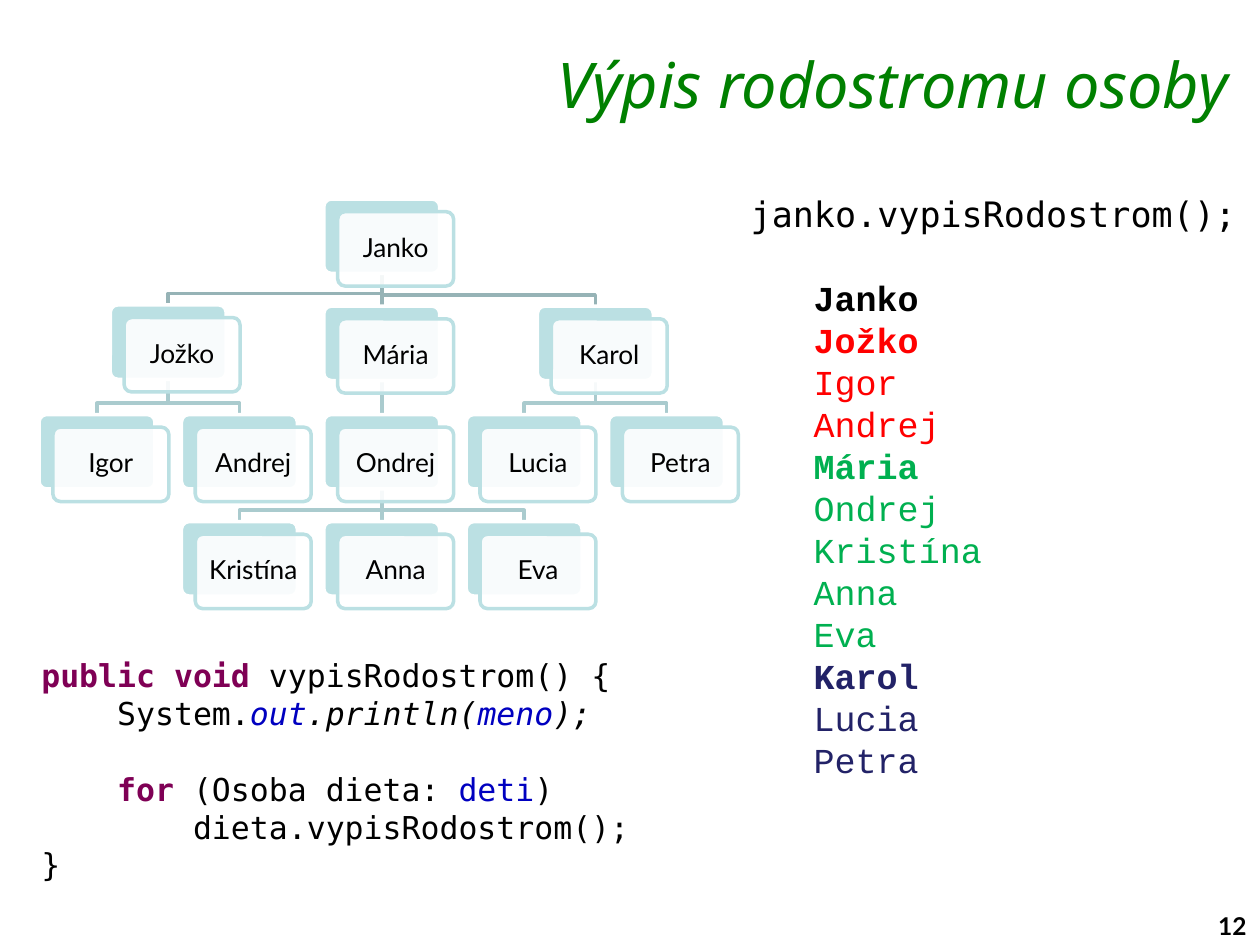
import lxml.etree
import pptx
import pptx.dml.color
import pptx.enum.shapes
import pptx.enum.text
import pptx.oxml.ns
import pptx.util

Inches = pptx.util.Inches
Pt = pptx.util.Pt
ALIGN = pptx.enum.text.PP_ALIGN
ANCHOR = pptx.enum.text.MSO_ANCHOR
qn = pptx.oxml.ns.qn

COLORS = {
    "black": "000000", "white": "FFFFFF", "title": "008000",
    "card": "BBE0E3", "top_line": "96B3B6", "line": "AACBCE",
    "keyword": "7F0055", "field": "0000C0",
    "red": "FF0000", "green": "00B050", "navy": "222267",
}
MONO = "DejaVu Sans Mono"
CARD_WIDTH, CARD_HEIGHT = 0.92, 0.59
FIRST_LEFT, COLUMN_STEP = 0.31, 1.13

FAMILY = {
    "Janko": (None, 2, 1.58),
    "Jožko": ("Janko", 0.5, 2.42),
    "Igor": ("Jožko", 0, 3.29),
    "Andrej": ("Jožko", 1, 3.29),
    "Mária": ("Janko", 2, 2.43),
    "Ondrej": ("Mária", 2, 3.29),
    "Kristína": ("Ondrej", 1, 4.14),
    "Anna": ("Ondrej", 2, 4.14),
    "Eva": ("Ondrej", 3, 4.14),
    "Karol": ("Janko", 3.5, 2.43),
    "Lucia": ("Karol", 3, 3.29),
    "Petra": ("Karol", 4, 3.29),
}
BRANCH_COLORS = {"Janko": "black", "Jožko": "red", "Mária": "green", "Karol": "navy"}

CODE = [
    [("public void ", {"color": "keyword", "bold": True}), ("vypisRodostrom() {", {})],
    [("    System.", {}), ("out", {"color": "field", "italic": True}),
     (".println(", {"italic": True}), ("meno", {"color": "field", "italic": True}),
     (");", {"italic": True})],
    [("    for ", {"color": "keyword", "bold": True}), ("(Osoba dieta: ", {}),
     ("deti", {"color": "field"}), (")", {})],
    [("        dieta.vypisRodostrom();", {})],
    [("}", {})],
]
LOOP_LINE = 2


def rgb(name):
    return pptx.dml.color.RGBColor.from_string(COLORS[name])


def add_run(paragraph, text, font=MONO, size=18, color="black", bold=False, italic=False):
    run = paragraph.add_run()
    run.text = text
    run.font.name = font
    run.font.size = Pt(size)
    run.font.color.rgb = rgb(color)
    run.font.bold = bold
    run.font.italic = italic


def add_text_box(slide, left, top, width, height):
    box = slide.shapes.add_textbox(Inches(left), Inches(top), Inches(width), Inches(height))
    box.text_frame.word_wrap = True
    return box.text_frame


def next_paragraph(frame, index, line_height):
    paragraph = frame.add_paragraph() if index else frame.paragraphs[0]
    paragraph.line_spacing = Pt(line_height)
    return paragraph


def style_line(shape, color):
    shape.line.color.rgb = rgb(color)
    shape.line.width = Pt(2)


def card_position(name):
    parent, column, top = FAMILY[name]
    return FIRST_LEFT + COLUMN_STEP * column, top


def add_branch(slide, parent, child):
    parent_left, parent_top = card_position(parent)
    child_left, child_top = card_position(child)
    start_x, end_x = parent_left + CARD_WIDTH / 2, child_left + CARD_WIDTH / 2
    start_y, turn_y = parent_top + CARD_HEIGHT, child_top - 0.09
    straight = start_x == end_x
    if straight:
        branch = slide.shapes.add_connector(
            pptx.enum.shapes.MSO_CONNECTOR.STRAIGHT,
            Inches(start_x), Inches(start_y), Inches(end_x), Inches(child_top))
        lxml.etree.SubElement(branch._element.spPr, qn("a:effectLst"))
    else:
        builder = slide.shapes.build_freeform(Inches(start_x), Inches(start_y))
        corners = [(start_x, turn_y), (end_x, turn_y), (end_x, child_top)]
        builder.add_line_segments([(Inches(x), Inches(y)) for x, y in corners], close=False)
        branch = builder.convert_to_shape()
        branch.shadow.inherit = False
        branch.fill.background()
    style_line(branch, "top_line" if parent == "Janko" else "line")
    return branch if straight else None


def add_rounded(slide, left, top, fill, line):
    shape = slide.shapes.add_shape(
        pptx.enum.shapes.MSO_SHAPE.ROUNDED_RECTANGLE,
        Inches(left), Inches(top), Inches(CARD_WIDTH), Inches(CARD_HEIGHT))
    shape.adjustments[0] = 0.1
    shape.shadow.inherit = False
    shape.fill.solid()
    shape.fill.fore_color.rgb = rgb(fill)
    style_line(shape, line)
    return shape


def add_card(slide, name):
    left, top = card_position(name)
    back = add_rounded(slide, left, top, "card", "white")
    front = add_rounded(slide, left + 0.11, top + 0.1, "white", "card")
    color = front._element.spPr.find(qn("a:solidFill"))[0]
    lxml.etree.SubElement(color, qn("a:alpha")).set("val", "90000")
    frame = front.text_frame
    frame.word_wrap = True
    frame.vertical_anchor = ANCHOR.MIDDLE
    frame.margin_left = frame.margin_right = Inches(0.06)
    frame.margin_top = frame.margin_bottom = Inches(0.06)
    paragraph = frame.paragraphs[0]
    paragraph.alignment = ALIGN.CENTER
    paragraph.line_spacing = 0.9
    add_run(paragraph, name, font="Lato", size=15)
    return back


def add_family_tree(slide):
    connectors = []
    for child, (parent, column, top) in FAMILY.items():
        connector = add_branch(slide, parent, child) if parent else None
        if connector:
            connectors.append((connector, parent, child))
    cards = {name: add_card(slide, name) for name in FAMILY}
    for connector, parent, child in connectors:
        connector.begin_connect(cards[parent], 2)
        connector.end_connect(cards[child], 0)


def add_code(slide):
    frame = add_text_box(slide, 0.23, 5.16, 6.33, 1.92)
    for index, runs in enumerate(CODE):
        paragraph = next_paragraph(frame, index, 21.6)
        if index == LOOP_LINE:
            paragraph.space_before = Pt(21.6)
        for text, style in runs:
            add_run(paragraph, text, **style)


def add_output(slide):
    frame = add_text_box(slide, 5.86, 1.48, 4.14, 5.15)
    add_run(next_paragraph(frame, 0, 24), "janko.vypisRodostrom();", size=20)
    color = "black"
    for index, name in enumerate(FAMILY, start=1):
        color = BRANCH_COLORS.get(name, color)
        paragraph = next_paragraph(frame, index, 24)
        if index == 1:
            paragraph.space_before = Pt(24)
        paragraph.level = 1
        properties = paragraph._p.get_or_add_pPr()
        properties.set("marL", str(Inches(0.5)))
        properties.set("indent", "0")
        add_run(paragraph, name, font="Courier New", size=20, color=color,
                bold=name in BRANCH_COLORS)


def main():
    presentation = pptx.Presentation()
    presentation.slide_width = Inches(10)
    presentation.slide_height = Inches(7.5)
    slide = presentation.slides.add_slide(presentation.slide_layouts[6])
    number = add_text_box(slide, 9.57, 7.18, 0.51, 0.33).paragraphs[0]
    add_run(number, "12", font="Lato", size=14, bold=True)
    title = add_text_box(slide, 2.29, 0.31, 7.55, 0.58).paragraphs[0]
    title.alignment = ALIGN.RIGHT
    add_run(title, "Výpis rodostromu osoby", font="Noto Sans", size=36,
            color="title", italic=True)
    add_family_tree(slide)
    add_code(slide)
    add_output(slide)
    presentation.save("out.pptx")


if __name__ == "__main__":
    main()
